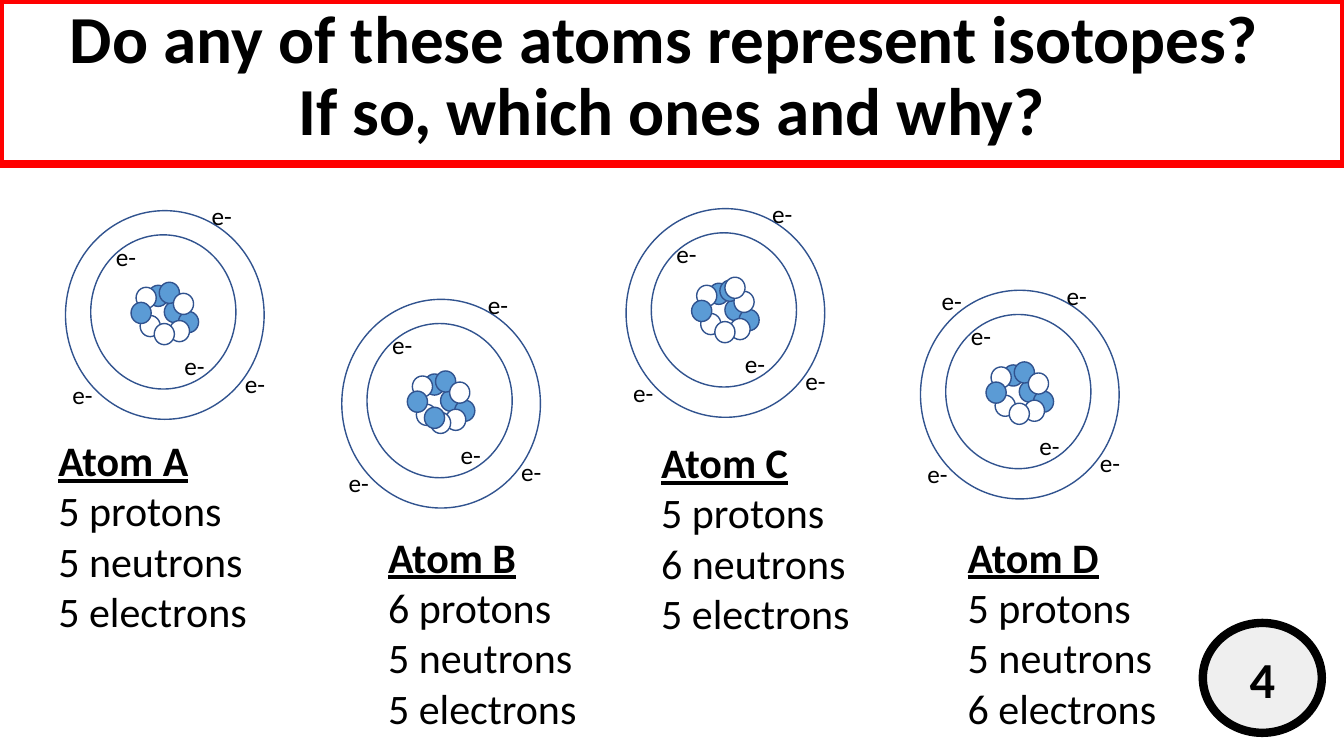
from dataclasses import dataclass

from pptx import Presentation
from pptx.dml.color import RGBColor
from pptx.enum.shapes import MSO_SHAPE
from pptx.enum.text import MSO_ANCHOR, MSO_AUTO_SIZE, PP_ALIGN
from pptx.util import Inches, Pt

OVAL = MSO_SHAPE.OVAL
TOP, MIDDLE = MSO_ANCHOR.TOP, MSO_ANCHOR.MIDDLE
LEFT, CENTER = PP_ALIGN.LEFT, PP_ALIGN.CENTER
NO_FIT = MSO_AUTO_SIZE.NONE

FONT = "Calibri"
BLACK, WHITE, RED, GREY = "000000", "FFFFFF", "FF0000", "EFEFEF"
BLUE, NAVY = "5B9BD5", "31538F"

Point = tuple[float, float]

# Offsets of the parts of an atom from the corner of its outer shell
NUCLEUS: list[tuple[str, Point]] = [
    (BLUE, (0.82, 0.74)), (BLUE, (0.98, 0.9)), (BLUE, (1.12, 1.0)),
    (BLUE, (0.93, 0.71)), (WHITE, (1.03, 1.09)), (WHITE, (0.7, 0.76)),
    (WHITE, (0.74, 1.04)), (WHITE, (0.88, 1.12)), (WHITE, (1.07, 0.82)),
    (BLUE, (0.65, 0.91)),
]
ELECTRONS: list[Point] = [
    (0.4, 0.25), (1.08, 1.34), (1.35, -0.15), (-0.03, 1.62), (1.68, 1.51),
]


@dataclass
class Atom:
    name: str
    corner: Point
    label: Point
    label_width: float
    counts: tuple[int, int, int]
    extra_nucleons: tuple[tuple[str, Point], ...] = ()
    extra_electrons: tuple[Point, ...] = ()


ATOMS = [
    Atom("Atom A", (0.65, 2.09), (0.48, 4.26), 2.29, (5, 5, 5)),
    Atom("Atom B", (3.39, 2.97), (3.75, 5.22), 2.29, (6, 5, 5),
         extra_nucleons=((BLUE, (0.82, 1.07)),)),
    Atom("Atom C", (6.21, 2.07), (6.46, 4.28), 2.14, (5, 6, 5),
         extra_nucleons=((WHITE, (0.98, 0.68)),)),
    Atom("Atom D", (9.13, 2.88), (9.5, 5.22), 2.14, (5, 5, 6),
         extra_electrons=((0.11, -0.1),)),
]


def rgb(value: str) -> RGBColor:
    return RGBColor.from_string(value)


def write(tf, lines: list[str], *, size: float, bold: bool = False,
          heading: bool = False, align=LEFT, anchor=TOP,
          spacing: float = 1.0) -> None:
    """Fill a text frame; a heading makes line one bold and underlined."""
    tf.word_wrap = True
    tf.auto_size = NO_FIT
    tf.vertical_anchor = anchor
    for i, line in enumerate(lines):
        p = tf.paragraphs[0] if i == 0 else tf.add_paragraph()
        p.text = line
        p.alignment = align
        p.line_spacing = spacing
        is_heading = heading and i == 0
        for r in p.runs:
            r.font.name = FONT
            r.font.size = Pt(size)
            r.font.bold = bold or is_heading
            r.font.underline = is_heading
            r.font.color.rgb = rgb(BLACK)


def add_text(slide, at: Point, width: float, height: float,
             lines: list[str], **style) -> None:
    sp = slide.shapes.add_textbox(*map(Inches, (*at, width, height)))
    write(sp.text_frame, lines, **style)


def add_oval(slide, at: Point, width: float, height: float, *,
             fill: str | None = None, line: str = NAVY, weight: float = 1):
    sp = slide.shapes.add_shape(OVAL, *map(Inches, (*at, width, height)))
    sp.shadow.inherit = False
    if fill:
        sp.fill.solid()
        sp.fill.fore_color.rgb = rgb(fill)
    else:
        sp.fill.background()
    sp.line.color.rgb = rgb(line)
    sp.line.width = Pt(weight)
    return sp


def add_atom(slide, atom: Atom) -> None:
    def place(offset: Point) -> Point:
        return atom.corner[0] + offset[0], atom.corner[1] + offset[1]

    for color, offset in (*NUCLEUS, *atom.extra_nucleons):
        add_oval(slide, place(offset), 0.2, 0.21, fill=color)
    add_oval(slide, place((0.25, 0.24)), 1.44, 1.53)
    add_oval(slide, atom.corner, 1.97, 2.07)
    for offset in (*ELECTRONS, *atom.extra_electrons):
        add_text(slide, place(offset), 0.52, 0.4, ["e-"], size=18)

    particles = ("protons", "neutrons", "electrons")
    lines = [f"{n} {kind}" for n, kind in zip(atom.counts, particles)]
    add_text(slide, atom.label, atom.label_width, 1.92,
             [atom.name, *lines], size=30, heading=True)


def add_title(slide) -> None:
    sp = slide.shapes.title
    sp.left, sp.top, sp.width, sp.height = map(Inches, (0, 0, 13.33, 1.63))
    sp.line.color.rgb = rgb(RED)
    sp.line.width = Pt(6)
    write(sp.text_frame,
          ["Do any of these atoms represent isotopes? \vIf so, which ones and why?"],
          size=48, bold=True, align=CENTER, spacing=0.9)


def add_badge(slide) -> None:
    sp = add_oval(slide, (11.93, 6.18), 1.18, 1.09,
                  fill=GREY, line=BLACK, weight=6)
    tf = sp.text_frame
    tf.margin_left = tf.margin_right = Inches(0.1)
    tf.margin_top = tf.margin_bottom = Inches(0.1)
    write(tf, ["4"], size=36, bold=True, align=CENTER, anchor=MIDDLE)


def main() -> None:
    prs = Presentation()
    prs.slide_width, prs.slide_height = Inches(13.33), Inches(7.5)
    slide = prs.slides.add_slide(prs.slide_layouts.get_by_name("Title Only"))

    # Question
    add_title(slide)
    # Atoms with their particle counts
    for atom in ATOMS:
        add_atom(slide, atom)
    # Question number
    add_badge(slide)

    prs.save("out.pptx")


if __name__ == "__main__":
    main()
